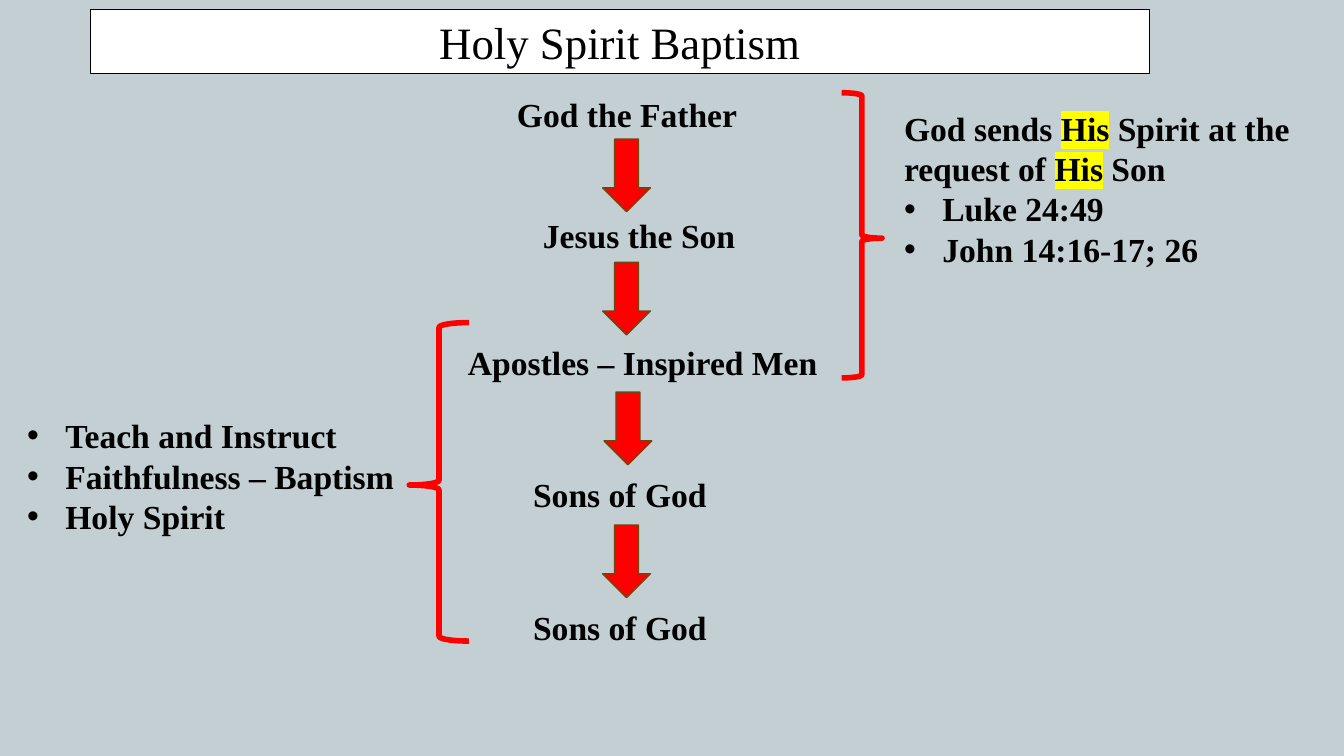
import pptx
import pptx.dml.color
import pptx.enum.shapes
import pptx.enum.text
import pptx.oxml
import pptx.oxml.ns
import pptx.util

SHAPES = pptx.enum.shapes.MSO_SHAPE
ALIGN = pptx.enum.text.PP_ALIGN
ANCHOR = pptx.enum.text.MSO_ANCHOR
AUTO_SIZE = pptx.enum.text.MSO_AUTO_SIZE
BLACK, WHITE, RED, BROWN = "000000", "FFFFFF", "FF0000", "6C470D"
YELLOW, BACKGROUND = "FFFF00", "C3CFD3"


def color(value):
    return pptx.dml.color.RGBColor.from_string(value)


def apply(target, values):
    for name, value in values.items():
        setattr(target, name, value)


def element(markup):
    namespace = pptx.oxml.ns.nsdecls("a")
    return pptx.oxml.parse_xml(markup.replace("XMLNS", namespace))


class Diagram:
    """Draw styled elements on one slide, placed in percent of its size."""

    body = {"name": "Times New Roman", "size": pptx.util.Pt(24), "bold": True}
    heading = {**body, "size": pptx.util.Pt(32), "bold": False}
    indent = pptx.util.Inches(0.38)

    def __init__(self, presentation):
        self.presentation = presentation
        self.slide = presentation.slides.add_slide(presentation.slide_layouts[5])
        fill = self.slide.background.fill
        fill.solid()
        fill.fore_color.rgb = color(BACKGROUND)

    def place(self, left, top, width, height):
        across = self.presentation.slide_width / 100
        down = self.presentation.slide_height / 100
        return [int(length) for length in
                (left * across, top * down, width * across, height * down)]

    def outline(self, shape, fill, line, weight):
        if fill:
            shape.fill.solid()
            shape.fill.fore_color.rgb = color(fill)
        else:
            shape.fill.background()
        shape.line.color.rgb = color(line)
        shape.line.width = pptx.util.Pt(weight)

    def add_text(self, paragraph, text, style, highlight=None):
        run = paragraph.add_run()
        run.text = text
        apply(run.font, style)
        run.font.color.rgb = color(BLACK)
        if highlight:
            mark = element(f'<a:highlight XMLNS><a:srgbClr val="{highlight}"/></a:highlight>')
            properties = run._r.get_or_add_rPr()
            properties.find(pptx.oxml.ns.qn("a:solidFill")).addnext(mark)

    def title(self, text, *area):
        shape = self.slide.shapes.title
        apply(shape, dict(zip(("left", "top", "width", "height"), self.place(*area))))
        self.outline(shape, WHITE, BLACK, 0.75)
        apply(shape.text_frame, {"word_wrap": True, "auto_size": AUTO_SIZE.NONE,
                                 "vertical_anchor": ANCHOR.MIDDLE})
        paragraph = shape.text_frame.paragraphs[0]
        paragraph.alignment = ALIGN.CENTER
        self.add_text(paragraph, text, self.heading)

    def text_frame(self, *area):
        frame = self.slide.shapes.add_textbox(*self.place(*area)).text_frame
        apply(frame, {"word_wrap": True, "auto_size": AUTO_SIZE.SHAPE_TO_FIT_TEXT})
        return frame

    def label(self, text, *area):
        paragraph = self.text_frame(*area).paragraphs[0]
        paragraph.alignment = ALIGN.CENTER
        self.add_text(paragraph, text, self.body)

    def note(self, lead, bullets, *area):
        frame = self.text_frame(*area)
        paragraph = frame.paragraphs[0]
        for text, highlight in lead:
            self.add_text(paragraph, text, self.body, highlight)
        for index, text in enumerate(bullets):
            if lead or index:
                paragraph = frame.add_paragraph()
            properties = paragraph._p.get_or_add_pPr()
            properties.set("marL", str(int(self.indent)))
            properties.set("indent", str(-int(self.indent)))
            properties.append(element('<a:buFont XMLNS typeface="Arial"/>'))
            properties.append(element('<a:buChar XMLNS char="•"/>'))
            self.add_text(paragraph, text, self.body)

    def shape(self, kind, area, fill, line, weight):
        shape = self.slide.shapes.add_shape(kind, *self.place(*area))
        shape.shadow.inherit = False
        self.outline(shape, fill, line, weight)
        return shape

    def arrow(self, left, top):
        self.shape(SHAPES.DOWN_ARROW, (left, top, 3.55, 9.6), RED, BROWN, 1)

    def brace(self, point, rotation, *area):
        shape = self.shape(SHAPES.RIGHT_BRACE, area, None, RED, 4)
        shape.rotation = rotation
        shape.adjustments[0] = 0.08
        shape.adjustments[1] = point


def main():
    presentation = pptx.Presentation()
    presentation.slide_width = pptx.util.Inches(40 / 3)
    presentation.slide_height = pptx.util.Inches(7.5)
    diagram = Diagram(presentation)
    diagram.title("Holy Spirit Baptism", 6.75, 1.2, 78.75, 8.55)

    for text, left, top, width in (
        ("God the Father", 36.38, 11.73, 20.55),
        ("Jesus the Son", 37.28, 27.73, 20.55),
        ("Apostles – Inspired Men", 33.23, 44.53, 29.18),
        ("Sons of God", 35.85, 62, 20.55),
        ("Sons of God", 35.85, 79.6, 20.55),
    ):
        diagram.label(text, left, top, width, 6.7)
    for left, top in ((44.85, 18.4), (44.85, 34.7), (44.95, 51.87), (44.85, 69.45)):
        diagram.arrow(left, top)

    diagram.brace(0.51, 0, 62.63, 12.27, 3, 37.73)
    diagram.brace(0.49, 180, 30.45, 42.67, 4.43, 42.13)
    diagram.note(
        [("God sends ", None), ("His", YELLOW), (" Spirit at the request of ", None),
         ("His", YELLOW), (" Son", None)],
        ["Luke 24:49", "John 14:16-17; 26"], 66.53, 13.6, 31.2, 22.93)
    diagram.note(
        [], ["Teach and Instruct", "Faithfulness – Baptism", "Holy Spirit"],
        1.28, 54.27, 29.18, 17.47)
    presentation.save("out.pptx")


if __name__ == "__main__":
    main()
